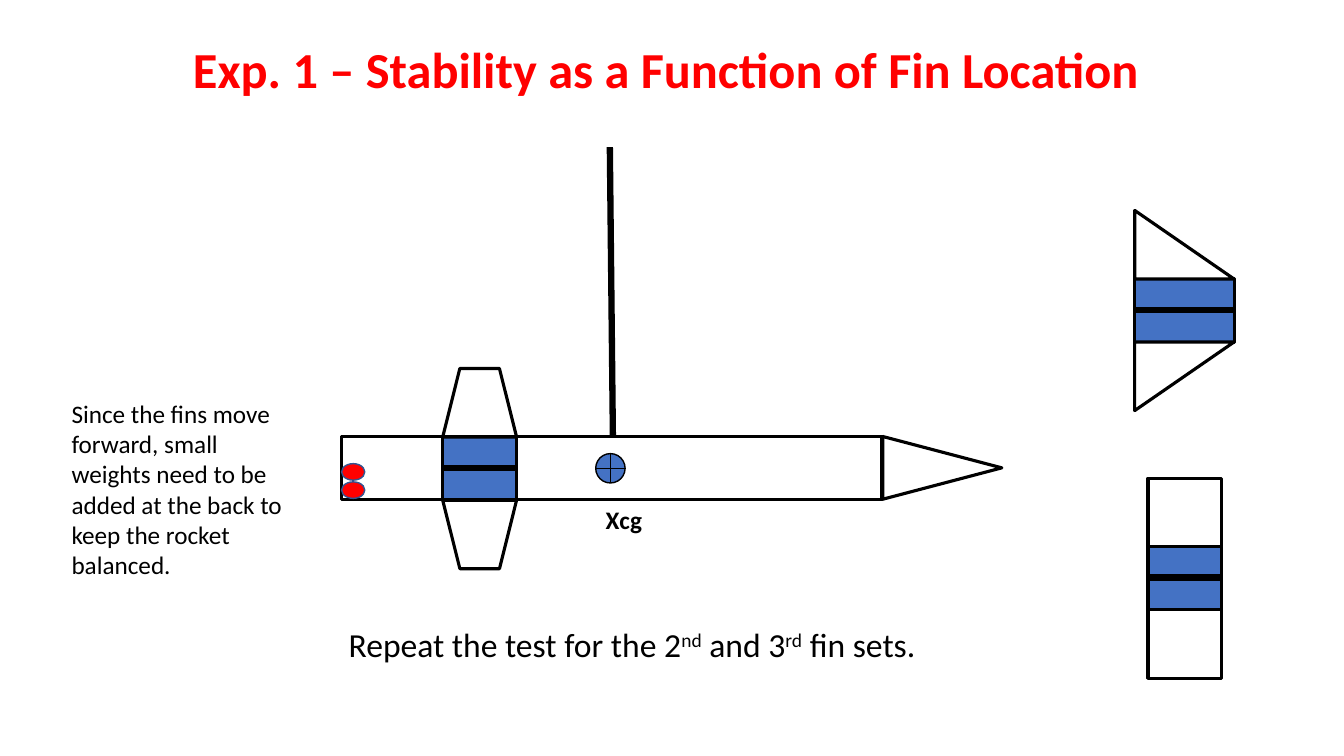
from lxml import etree
from pptx import Presentation
from pptx.dml.color import RGBColor
from pptx.enum.shapes import MSO_CONNECTOR, MSO_SHAPE
from pptx.enum.text import PP_ALIGN
from pptx.oxml.ns import qn
from pptx.util import Pt

STRAIGHT = MSO_CONNECTOR.STRAIGHT
RECTANGLE = MSO_SHAPE.RECTANGLE
TRAPEZOID = MSO_SHAPE.TRAPEZOID
RIGHT_TRIANGLE = MSO_SHAPE.RIGHT_TRIANGLE
TRIANGLE = MSO_SHAPE.ISOSCELES_TRIANGLE
OVAL = MSO_SHAPE.OVAL
CROSSED_CIRCLE = MSO_SHAPE.FLOWCHART_OR
CENTER = PP_ALIGN.CENTER

BLACK, WHITE, RED = "000000", "FFFFFF", "FF0000"
BLUE, DARK_BLUE = "4472C4", "325491"
BAND_HEIGHT, FIN_HEIGHT = 46, 49


def color(value):
    """Turn a hex string into a colour."""
    return RGBColor.from_string(value)


def add_outline(shapes, kind, left, top, width, height, fill=None,
                line=BLACK, weight=2.25, rotation=0):
    """Add a preset shape that covers the given box once it is rotated."""
    if rotation % 180:
        left += (width - height) / 2
        top += (height - width) / 2
        width, height = height, width
    shape = shapes.add_shape(kind, Pt(left), Pt(top), Pt(width), Pt(height))
    shape.shadow.inherit = False
    shape.rotation = rotation
    if fill:
        shape.fill.solid()
        shape.fill.fore_color.rgb = color(fill)
    else:
        shape.fill.background()
    shape.line.color.rgb = color(line)
    shape.line.width = Pt(weight)


def add_line(shapes, start, end, weight=4.5):
    """Add a straight black line between two points."""
    line = shapes.add_connector(STRAIGHT, *map(Pt, start + end))
    line.line.color.rgb = color(BLACK)
    line.line.width = Pt(weight)
    etree.SubElement(line._element.spPr, qn("a:effectLst"))


def add_fin_set(slide, left, top, width, kind, lower_rotation, fin_fill=None):
    """Add a blue band with a stripe and a fin above and below it."""
    shapes = slide.shapes.add_group_shape().shapes
    add_outline(shapes, RECTANGLE, left, top, width, BAND_HEIGHT, BLUE)
    stripe = top + 22.3
    add_line(shapes, (left, stripe), (left + width, stripe))
    add_outline(shapes, kind, left, top - 48.6, width, FIN_HEIGHT, fin_fill)
    add_outline(shapes, kind, left, top + 45.4, width, FIN_HEIGHT, fin_fill,
                rotation=lower_rotation)


def add_text(shapes, left, top, width, height, pieces, size,
             text_color=BLACK, bold=False):
    """Add one paragraph in which every second piece is superscript."""
    box = shapes.add_textbox(Pt(left), Pt(top), Pt(width), Pt(height))
    box.text_frame.word_wrap = True
    paragraph = box.text_frame.paragraphs[0]
    paragraph.font.name = "Calibri"
    paragraph.font.size = Pt(size)
    paragraph.font.bold = bold
    paragraph.font.color.rgb = color(text_color)
    for index, piece in enumerate(pieces):
        run = paragraph.add_run()
        run.text = piece
        if index % 2:
            run._r.get_or_add_rPr().set("baseline", "30000")
    return paragraph


def add_rocket(slide):
    """Add the body, nose, centre of gravity and hanging string."""
    shapes = slide.shapes.add_group_shape().shapes
    add_outline(shapes, RECTANGLE, 244, 311.8, 386, 44.8)
    add_outline(shapes, TRIANGLE, 630.6, 311.8, 85, 44.8, rotation=90)
    add_outline(shapes, CROSSED_CIRCLE, 425.5, 324, 21, 21, BLUE, weight=1)
    add_text(shapes, 425.5, 357, 74, 29, ["Xcg"], 18, bold=True)
    add_line(shapes, (437.8, 311.8), (435.6, 105.1))


def main():
    """Build and save the slide."""
    presentation = Presentation()
    presentation.slide_width, presentation.slide_height = Pt(960), Pt(540)
    slide = presentation.slides.add_slide(presentation.slide_layouts[6])

    add_fin_set(slide, 316.2, 311.8, 52.8, TRAPEZOID, 180)
    add_rocket(slide)
    for top in (344.2, 331.2):
        add_outline(slide.shapes, OVAL, 244, top, 16.6, 11.8, RED, DARK_BLUE, 1)

    title = add_text(slide.shapes, 66, 28.8, 828, 60,
                     ["Exp. 1 – Stability as a Function of Fin Location "],
                     36, RED, bold=True)
    title.alignment = CENTER
    title.line_spacing = 0.9

    add_fin_set(slide, 820, 390.2, 52.6, RECTANGLE, 0, WHITE)
    add_fin_set(slide, 810.5, 198.9, 71, RIGHT_TRIANGLE, 90, WHITE)

    add_text(slide.shapes, 44, 281, 170, 138,
             ["Since the fins move forward, small weights need to be added "
              "at the back to keep the rocket balanced."], 18)
    add_text(slide.shapes, 242, 442, 453, 36,
             ["Repeat the test for the 2", "nd", " and 3", "rd", " fin sets."], 24)
    presentation.save("out.pptx")


if __name__ == "__main__":
    main()
